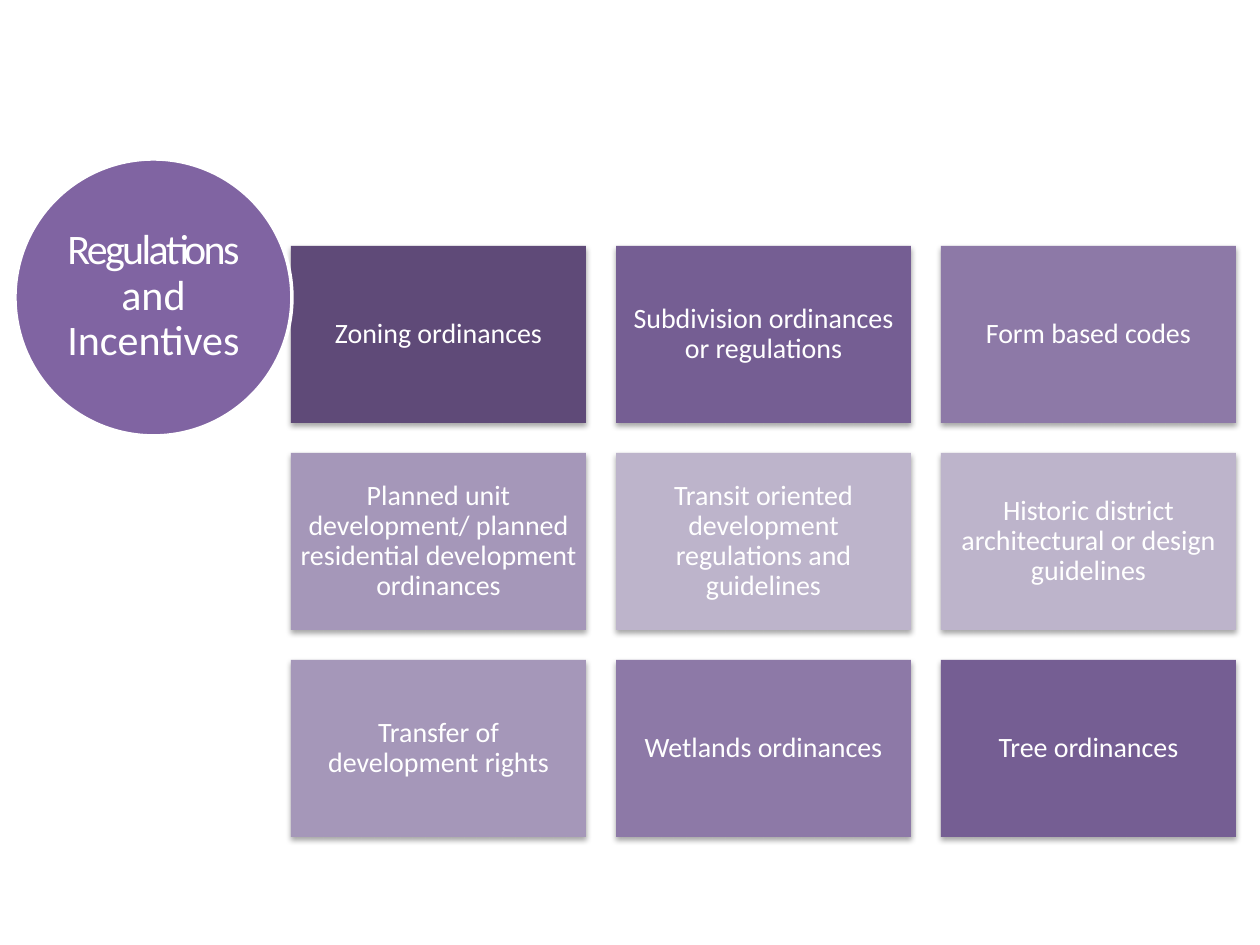
from dataclasses import dataclass

from lxml import etree
from pptx import Presentation
from pptx.dml.color import RGBColor
from pptx.enum.shapes import MSO_SHAPE
from pptx.enum.text import MSO_ANCHOR, MSO_AUTO_SIZE, PP_ALIGN
from pptx.oxml.ns import qn
from pptx.shapes.autoshape import Shape
from pptx.slide import Slide
from pptx.text.text import TextFrame
from pptx.util import Emu, Inches, Pt

RECTANGLE, OVAL = MSO_SHAPE.RECTANGLE, MSO_SHAPE.OVAL
MIDDLE, CENTER = MSO_ANCHOR.MIDDLE, PP_ALIGN.CENTER
NO_AUTOFIT = MSO_AUTO_SIZE.NONE
PIXELS_PER_INCH = 126


@dataclass(frozen=True)
class Theme:
    font: str = "Calibri"
    text: str = "FFFFFF"
    circle: str = "8064A2"
    shadow: str = "000000"
    title_size: int = 24
    card_size: int = 16


@dataclass(frozen=True)
class Box:
    left: int
    top: int
    width: int
    height: int


@dataclass(frozen=True)
class Card:
    text: str
    fill: str


@dataclass(frozen=True)
class TextPart:
    text: str
    spacing: int = 0  # hundredths of a point


THEME = Theme()
CIRCLE = Box(15, 159, 277, 277)
TITLE = Box(56, 199, 195, 195)
FIRST_CARD = Box(291, 246, 295, 177)
CARD_GAP = 30
COLUMNS = 3
TITLE_PARTS = [TextPart("Regulations", -150), TextPart(" and Incentives")]
CARDS = [
    Card("Zoning ordinances", "5F4A78"),
    Card("Subdivision ordinances or regulations", "755E93"),
    Card("Form based codes", "8D79A7"),
    Card("Planned unit development/ planned residential development ordinances", "A597B9"),
    Card("Transit oriented development regulations and guidelines", "BDB4CB"),
    Card("Historic district architectural or design guidelines", "BDB4CB"),
    Card("Transfer of development rights", "A597B9"),
    Card("Wetlands ordinances", "8D79A7"),
    Card("Tree ordinances", "755E93"),
]


def px(length: int) -> Emu:
    return Emu(round(length * Inches(1) / PIXELS_PER_INCH))


def add_filled_shape(slide: Slide, kind: MSO_SHAPE, box: Box, fill: str) -> Shape:
    shape = slide.shapes.add_shape(
        kind, px(box.left), px(box.top), px(box.width), px(box.height)
    )
    shape.shadow.inherit = False
    shape.fill.solid()
    shape.fill.fore_color.rgb = RGBColor.from_string(fill)
    shape.line.fill.background()
    return shape


def add_drop_shadow(shape: Shape) -> None:
    effects = shape.element.spPr.find(qn("a:effectLst"))
    shadow = etree.SubElement(
        effects, qn("a:outerShdw"), blurRad=str(Pt(3.1)), dist=str(Pt(1.8)),
        dir="5400000", rotWithShape="0",
    )
    color = etree.SubElement(shadow, qn("a:srgbClr"), val=THEME.shadow)
    etree.SubElement(color, qn("a:alpha"), val="35000")


def write_centered(frame: TextFrame, parts: list[TextPart], size: int, inset: int) -> None:
    frame.word_wrap = True
    frame.auto_size = NO_AUTOFIT
    frame.vertical_anchor = MIDDLE
    frame.margin_left = frame.margin_right = px(inset)
    frame.margin_top = frame.margin_bottom = px(inset)
    paragraph = frame.paragraphs[0]
    paragraph.alignment = CENTER
    paragraph.line_spacing = 0.9
    for part in parts:
        run = paragraph.add_run()
        run.text = part.text
        run.font.name = THEME.font
        run.font.size = Pt(size)
        run.font.color.rgb = RGBColor.from_string(THEME.text)
        if part.spacing:
            run._r.get_or_add_rPr().set("spc", str(part.spacing))


def add_cards(slide: Slide) -> None:
    for index, card in enumerate(CARDS):
        row, column = divmod(index, COLUMNS)
        box = Box(
            FIRST_CARD.left + column * (FIRST_CARD.width + CARD_GAP),
            FIRST_CARD.top + row * (FIRST_CARD.height + CARD_GAP),
            FIRST_CARD.width,
            FIRST_CARD.height,
        )
        shape = add_filled_shape(slide, RECTANGLE, box, card.fill)
        add_drop_shadow(shape)
        write_centered(shape.text_frame, [TextPart(card.text)], THEME.card_size, 9)


def add_title_circle(slide: Slide) -> None:
    circle = add_filled_shape(slide, OVAL, CIRCLE, THEME.circle)
    circle.line.color.rgb = RGBColor.from_string(THEME.text)
    circle.line.width = Pt(2)
    title = slide.shapes.title
    title.left, title.top = px(TITLE.left), px(TITLE.top)
    title.width, title.height = px(TITLE.width), px(TITLE.height)
    write_centered(title.text_frame, TITLE_PARTS, THEME.title_size, 2)
    circle.element.addnext(title.element)


def main() -> None:
    presentation = Presentation()
    presentation.slide_width = Inches(10)
    presentation.slide_height = Inches(7.5)
    title_only = presentation.slide_layouts.get_by_name("Title Only")
    slide = presentation.slides.add_slide(title_only)
    add_cards(slide)
    add_title_circle(slide)
    presentation.save("out.pptx")


if __name__ == "__main__":
    main()
